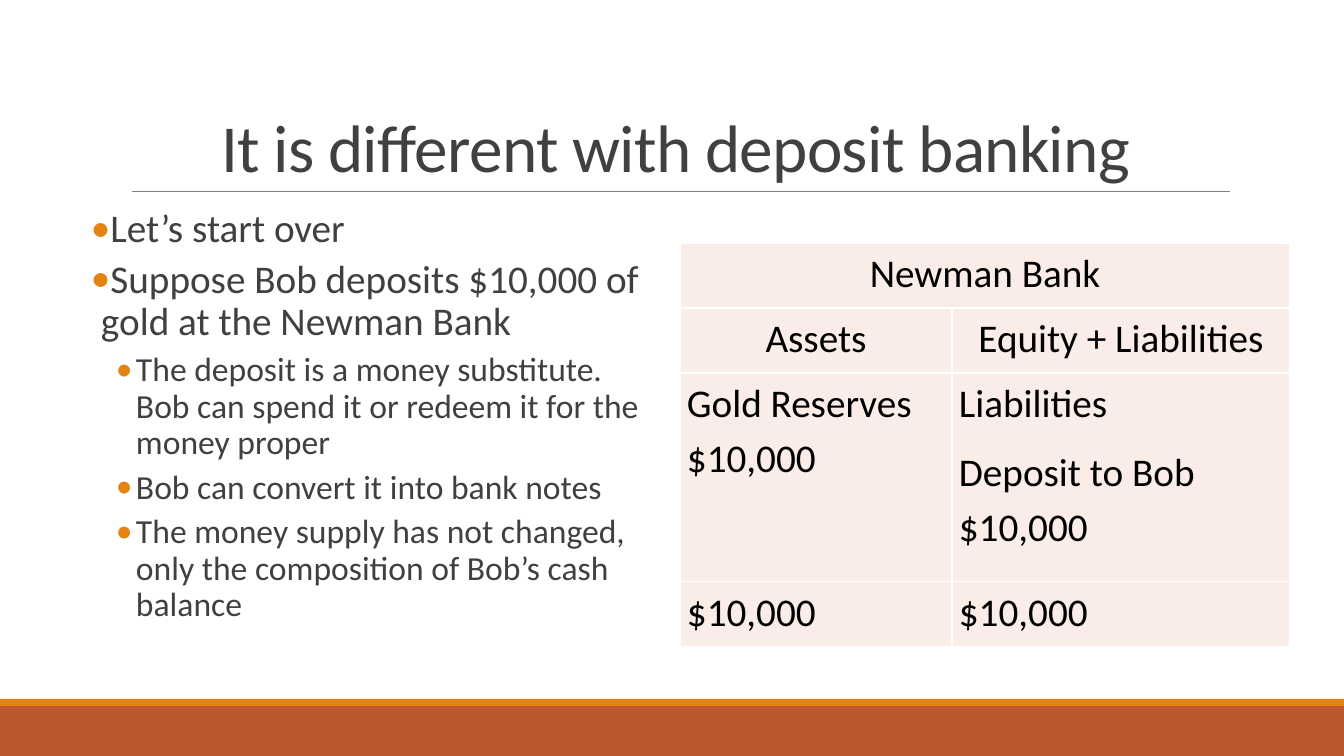
from lxml import etree
from pptx import Presentation
from pptx.dml.color import RGBColor
from pptx.enum.shapes import MSO_CONNECTOR, MSO_SHAPE
from pptx.enum.text import MSO_ANCHOR, MSO_AUTO_SIZE, PP_ALIGN
from pptx.oxml.ns import qn
from pptx.util import Pt

PX = 914400 / 100.8
RECT, STRAIGHT = MSO_SHAPE.RECTANGLE, MSO_CONNECTOR.STRAIGHT
TOP, BOTTOM = MSO_ANCHOR.TOP, MSO_ANCHOR.BOTTOM
NO_FIT = MSO_AUTO_SIZE.NONE
LEFT, CENTER, JUSTIFY = PP_ALIGN.LEFT, PP_ALIGN.CENTER, PP_ALIGN.JUSTIFY
FONT = "Calibri"
COLORS = {"rust": "BD582C", "orange": "E48312", "rule": "808080", "text": "404040",
          "cell": "FAEDE7", "border": "FFFFFF", "black": "000000"}

TITLE = "It is different with deposit banking"
BULLETS = [
    (0, "Let’s start over"),
    (0, "Suppose Bob deposits $10,000 of gold at the Newman Bank"),
    (1, "The deposit is a money substitute. Bob can spend it or redeem it for the money proper"),
    (1, "Bob can convert it into bank notes"),
    (1, "The money supply has not changed, only the composition of Bob’s cash balance"),
]
BULLET_LEVELS = [{"size": 28, "margin": 10, "hang": 10},
                 {"size": 24, "margin": 45, "hang": 20}]
COLUMN_WIDTHS = [272, 338]
ROW_HEIGHTS = [65, 65, 209, 65]
# Each cell is a list of (text, alignment) paragraphs.
BALANCE_SHEET = [
    [[("Newman Bank", CENTER)], []],
    [[("Assets", CENTER)], [("Equity + Liabilities", CENTER)]],
    [[("Gold Reserves $10,000", LEFT)],
     [("Liabilities", JUSTIFY), ("Deposit to Bob $10,000", LEFT)]],
    [[("$10,000", JUSTIFY)], [("$10,000", JUSTIFY)]],
]


def px(n):
    return round(n * PX)


def rgb(name):
    return RGBColor.from_string(COLORS[name])


def set_attrs(obj, formats):
    for name, value in formats.items():
        setattr(obj, name, value)


def place(sp, left, top, width, height):
    set_attrs(sp, {"left": px(left), "top": px(top),
                   "width": px(width), "height": px(height)})


def add_run(p, text, size, color):
    r = p.add_run()
    r.text = text
    set_attrs(r.font, {"name": FONT, "size": Pt(size), "bold": False})
    r.font.color.rgb = rgb(color)
    return r


def add_paragraph(tf, index):
    return tf.paragraphs[0] if index == 0 else tf.add_paragraph()


def add_bar(slide, top, height, color):
    sp = slide.shapes.add_shape(RECT, 0, px(top), px(1344), px(height))
    sp.shadow.inherit = False
    sp.fill.solid()
    sp.fill.fore_color.rgb = rgb(color)
    sp.line.fill.background()


def add_rule(slide, left, right, y):
    line = slide.shapes.add_connector(STRAIGHT, px(left), px(y), px(right), px(y))
    line.line.color.rgb = rgb("rule")
    line.line.width = Pt(0.5)
    etree.SubElement(line._element.spPr, qn("a:effectLst"))


def fill_title(sp):
    place(sp, 121, 31, 1109, 160)
    tf = sp.text_frame
    set_attrs(tf, {"word_wrap": True, "auto_size": NO_FIT, "vertical_anchor": BOTTOM})
    p = tf.paragraphs[0]
    set_attrs(p, {"alignment": CENTER, "line_spacing": 0.85})
    r = add_run(p, TITLE, 48, "text")
    r.font._element.set("spc", "-50")


def set_bullet(p, margin, hang):
    pPr = p._p.get_or_add_pPr()
    pPr.set("marL", str(px(margin)))
    pPr.set("indent", str(-px(hang)))
    color = etree.SubElement(pPr, qn("a:buClr"))
    etree.SubElement(color, qn("a:srgbClr"), val=COLORS["orange"])
    etree.SubElement(pPr, qn("a:buFont"), typeface=FONT)
    etree.SubElement(pPr, qn("a:buChar"), char="•")


def fill_bullets(sp):
    place(sp, 91, 204, 550, 444)
    tf = sp.text_frame
    set_attrs(tf, {"word_wrap": True, "auto_size": NO_FIT, "vertical_anchor": TOP,
                   "margin_left": 0, "margin_right": 0,
                   "margin_top": px(5), "margin_bottom": px(5)})
    for i, (level, text) in enumerate(BULLETS):
        style = BULLET_LEVELS[level]
        p = add_paragraph(tf, i)
        set_attrs(p, {"level": level, "alignment": LEFT, "line_spacing": 0.9,
                      "space_before": Pt(2), "space_after": Pt(4)})
        set_bullet(p, style["margin"], style["hang"])
        add_run(p, text, style["size"], "text")


def style_cell(cell):
    set_attrs(cell, {"margin_left": px(7), "margin_right": px(7),
                     "margin_top": 0, "margin_bottom": 0, "vertical_anchor": TOP})
    tcPr = cell._tc.get_or_add_tcPr()
    for side in "LRTB":
        ln = etree.SubElement(tcPr, qn(f"a:ln{side}"), w=str(Pt(1)))
        fill = etree.SubElement(ln, qn("a:solidFill"))
        etree.SubElement(fill, qn("a:srgbClr"), val=COLORS["border"])
    cell.fill.solid()
    cell.fill.fore_color.rgb = rgb("cell")


def add_balance_sheet(slide):
    table = slide.shapes.add_table(
        len(ROW_HEIGHTS), len(COLUMN_WIDTHS), px(680), px(243),
        px(sum(COLUMN_WIDTHS)), px(sum(ROW_HEIGHTS))).table
    set_attrs(table, {"first_row": False, "horz_banding": False})
    for column, width in zip(table.columns, COLUMN_WIDTHS):
        column.width = px(width)
    for row, height in zip(table.rows, ROW_HEIGHTS):
        row.height = px(height)
    for i, row in enumerate(BALANCE_SHEET):
        for j, paragraphs in enumerate(row):
            cell = table.cell(i, j)
            style_cell(cell)
            for k, (text, alignment) in enumerate(paragraphs):
                p = add_paragraph(cell.text_frame, k)
                set_attrs(p, {"alignment": alignment, "line_spacing": 1.15,
                              "space_after": Pt(0 if i == 1 else 10)})
                add_run(p, text, 28, "black")
    table.cell(0, 0).merge(table.cell(0, 1))


def main():
    prs = Presentation()
    set_attrs(prs, {"slide_width": px(1344), "slide_height": px(756)})
    slide = prs.slides.add_slide(prs.slide_layouts[1])
    add_bar(slide, 706, 50, "rust")
    add_bar(slide, 699, 7, "orange")
    add_rule(slide, 132, 1230, 191)
    fill_title(slide.shapes.title)
    fill_bullets(slide.placeholders[1])
    add_balance_sheet(slide)
    prs.save("out.pptx")


if __name__ == "__main__":
    main()
